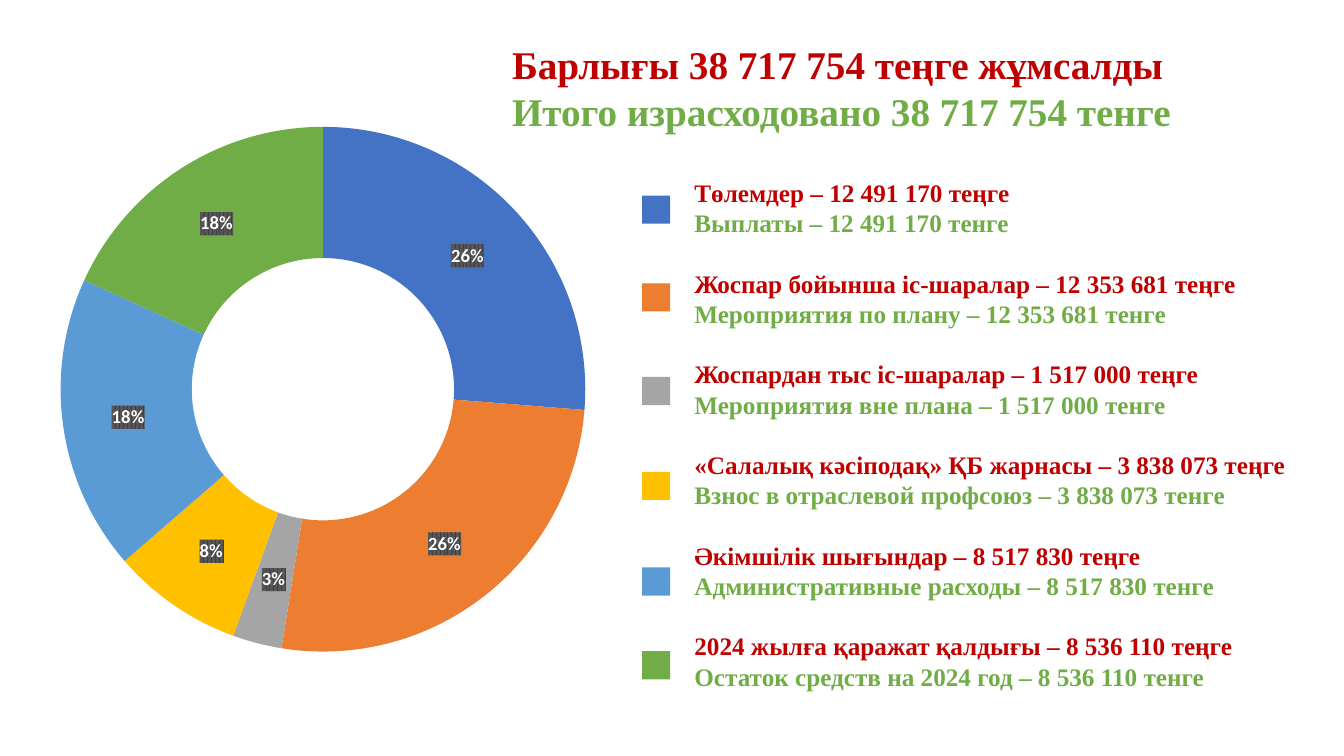
from lxml.etree import SubElement
from pptx import Presentation
from pptx.chart.data import CategoryChartData
from pptx.dml.color import RGBColor
from pptx.enum.chart import XL_CHART_TYPE
from pptx.enum.shapes import MSO_SHAPE
from pptx.enum.text import MSO_ANCHOR, PP_ALIGN
from pptx.oxml import parse_xml
from pptx.oxml.ns import nsdecls, qn
from pptx.util import Cm, Pt

RED = RGBColor(0xC0, 0x00, 0x00)
GREEN = RGBColor(0x70, 0xAD, 0x47)
BLUE = RGBColor(0x44, 0x72, 0xC4)
ORANGE = RGBColor(0xED, 0x7D, 0x31)
GREY = RGBColor(0xA5, 0xA5, 0xA5)
GOLD = RGBColor(0xFF, 0xC0, 0x00)
SKY = RGBColor(0x5B, 0x9B, 0xD5)
WHITE = RGBColor(0xFF, 0xFF, 0xFF)
SERIF = "Times New Roman"

TITLE = ("Барлығы 38 717 754 теңге жұмсалды",
         "Итого израсходовано 38 717 754 тенге")
ITEMS = [
    (26, BLUE, 4.93, "Төлемдер – 12 491 170 теңге",
     "Выплаты – 12 491 170 тенге"),
    (26, ORANGE, 7.14, "Жоспар бойынша іс-шаралар – 12 353 681 теңге",
     "Мероприятия по плану – 12 353 681 тенге"),
    (3, GREY, 9.5, "Жоспардан тыс іс-шаралар – 1 517 000 теңге",
     "Мероприятия вне плана – 1 517 000 тенге"),
    (8, GOLD, 11.89, "«Салалық кәсіподақ» ҚБ жарнасы – 3 838 073 теңге",
     "Взнос в отраслевой профсоюз – 3 838 073 тенге"),
    (18, SKY, 14.3, "Әкімшілік шығындар – 8 517 830 теңге",
     "Административные расходы – 8 517 830 тенге"),
    (18, GREEN, 16.41, "2024 жылға қаражат қалдығы – 8 536 110 теңге",
     "Остаток средств на 2024 год – 8 536 110 тенге"),
]


def add_line(frame, text, size=18, color=RED, gap=0):
    para = frame.paragraphs[-1]
    if para.runs:
        para = frame.add_paragraph()
    para.alignment = PP_ALIGN.LEFT
    para.line_spacing = 1.0
    para.space_before = Pt(gap)
    run = para.add_run()
    run.text = text
    font = run.font
    font.name, font.size, font.bold = SERIF, Pt(size), True
    font.color.rgb = color


def add_pair(frame, pair, size, gap=0):
    add_line(frame, pair[0], size=size, gap=gap)
    add_line(frame, pair[1], size=size, color=GREEN)


def set_title(slide):
    title = slide.shapes.title
    title.left, title.top = Cm(12.65), Cm(0.89)
    title.width, title.height = Cm(20.68), Cm(2.64)
    frame = title.text_frame
    frame.word_wrap = True
    frame.vertical_anchor = MSO_ANCHOR.TOP
    add_pair(frame, TITLE, 28)


def place_plot(chart, **box):
    area = chart._chartSpace.chart.plotArea
    for old in area.findall(qn("c:layout")):
        area.remove(old)
    layout = parse_xml(f"<c:layout {nsdecls('c')}/>")
    area.insert(0, layout)
    manual = SubElement(layout, qn("c:manualLayout"))
    marks = {"layoutTarget": "inner", "xMode": "edge", "yMode": "edge"}
    for name, value in {**marks, **box}.items():
        SubElement(manual, qn(f"c:{name}")).set("val", str(value))


def style_tags(plot):
    plot.has_data_labels = True
    tags = plot.data_labels
    tags.show_percentage = True
    tags.show_value = False
    tags.number_format, tags.number_format_is_linked = "0%", False
    font = tags.font
    font.name, font.size, font.bold = "Calibri", Pt(13.3), True
    font.color.rgb = WHITE
    fill = parse_xml(
        f'<c:spPr {nsdecls("c", "a")}><a:pattFill prst="pct75">'
        '<a:fgClr><a:srgbClr val="404040"/></a:fgClr>'
        '<a:bgClr><a:srgbClr val="595959"/></a:bgClr>'
        '</a:pattFill><a:ln><a:noFill/></a:ln></c:spPr>')
    tags._element.find(qn("c:numFmt")).addnext(fill)


def add_ring(slide):
    data = CategoryChartData()
    data.categories = [str(i + 1) for i in range(len(ITEMS))]
    data.add_series("Series 1", [item[0] for item in ITEMS])
    chart = slide.shapes.add_chart(
        XL_CHART_TYPE.DOUGHNUT, Cm(-0.66), Cm(2.64), Cm(21.46), Cm(13.92),
        data).chart
    chart.has_legend = chart.has_title = False
    chart.font.name, chart.font.size = "Calibri", Pt(10)
    plot = chart.plots[0]
    plot.vary_by_categories = True
    for i, item in enumerate(ITEMS):
        fill = plot.series[0].points[i].format.fill
        fill.solid()
        fill.fore_color.rgb = item[1]
    style_tags(plot)
    place_plot(chart, x=0.08, y=0.04, w=0.66, h=0.95)


def add_key(slide, top, color):
    key = slide.shapes.add_shape(
        MSO_SHAPE.RECTANGLE, Cm(16.18), Cm(top), Cm(0.71), Cm(0.71))
    key.shadow.inherit = False
    key.fill.solid()
    key.fill.fore_color.rgb = color
    key.line.fill.background()


def add_list(slide):
    box = slide.shapes.add_textbox(Cm(17.25), Cm(4.34), Cm(19.28), Cm(14.1))
    frame = box.text_frame
    frame.word_wrap = True
    for i, (_, color, top, *pair) in enumerate(ITEMS):
        add_pair(frame, pair, 18, gap=21.6 if i else 0)
        add_key(slide, top, color)


def main():
    """Build the spending slide and save it."""
    deck = Presentation()
    deck.slide_width, deck.slide_height = Cm(33.87), Cm(19.05)
    slide = deck.slides.add_slide(deck.slide_layouts[5])
    add_ring(slide)
    set_title(slide)
    add_list(slide)
    deck.save("out.pptx")


if __name__ == "__main__":
    main()
